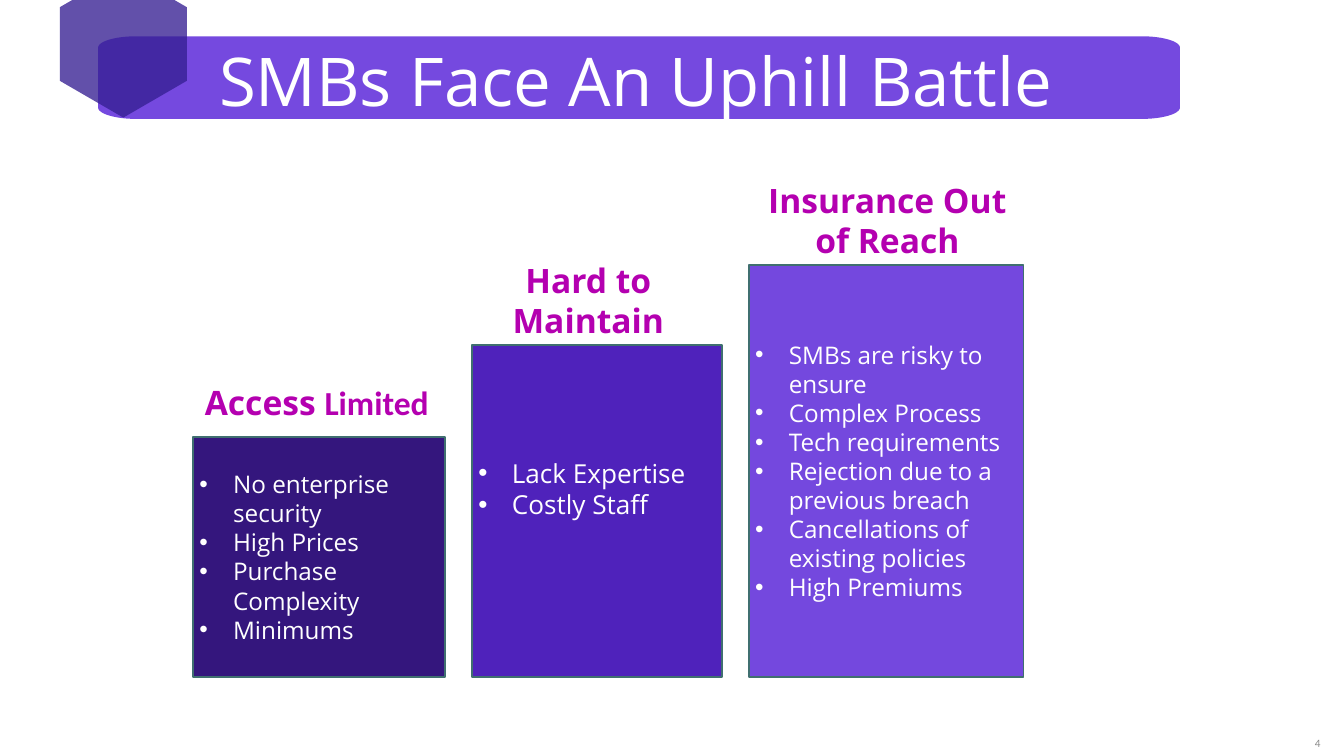
from dataclasses import dataclass
from math import cos, pi, sin

from lxml import etree
from pptx import Presentation
from pptx.dml.color import RGBColor
from pptx.enum import shapes, text
from pptx.oxml import ns
from pptx.util import Emu, Inches, Pt

COLUMNS, ROWS = 20, 11.25
CELL = Inches(1)
BASE_ROW = 10.07
WHITE, MAGENTA, EDGE = "FFFFFF", "B400B0", "406F70"
BODY_FONT, PLAIN_FONT = "Open Sans", "Calibri"
ALIGN = text.PP_ALIGN


@dataclass(frozen=True)
class Area:
    column: float
    row: float
    columns: float
    rows: float

    def emu(self) -> list[Emu]:
        return [grid(n) for n in (self.column, self.row, self.columns, self.rows)]


@dataclass(frozen=True)
class Span:
    words: str
    font: str = BODY_FONT


@dataclass(frozen=True)
class Step:
    column: float
    row: float
    columns: float
    fill: str
    size: float
    bullets: tuple[str, ...]
    heading: tuple[Span, ...]
    heading_area: Area
    heading_align: ALIGN = ALIGN.CENTER
    lift: float = 0


STEPS = (
    Step(2.87, 6.5, 3.75, "34167D", 26,
         ("No enterprise security", "High Prices", "Purchase Complexity", "Minimums"),
         (Span("Access "), Span("Limited", PLAIN_FONT)),
         Area(2.95, 5.63, 3.7, 0.71), ALIGN.LEFT),
    Step(7.02, 5.14, 3.73, "4F22BB", 28,
         ("Lack Expertise", "Costly Staff"),
         (Span("Hard to Maintain"),),
         Area(6.87, 3.82, 3.77, 1.31), lift=0.67),
    Step(11.14, 3.94, 4.09, "7448DE", 26,
         ("SMBs are risky to ensure", "Complex Process", "Tech requirements",
          "Rejection due to a previous breach", "Cancellations of existing policies",
          "High Premiums"),
         (Span("Insurance Out of Reach"),),
         Area(11.14, 2.63, 4.13, 1.35)),
)


def grid(cells: float) -> Emu:
    return Emu(round(cells * CELL))


def color(value: str) -> RGBColor:
    return RGBColor.from_string(value)


def style(font, size: float, value: str, name: str = BODY_FONT, bold: bool = False) -> None:
    font.size, font.name, font.bold = Pt(size), name, bold
    font.color.rgb = color(value)


def add_polygon(page, points: list[tuple[float, float]], fill: str):
    corners = [(grid(x), grid(y)) for x, y in points]
    builder = page.shapes.build_freeform(*corners[0])
    builder.add_line_segments(corners[1:], close=True)
    polygon = builder.convert_to_shape()
    polygon.shadow.inherit = False
    polygon.fill.solid()
    polygon.fill.fore_color.rgb = color(fill)
    polygon.line.fill.background()
    return polygon


def add_banner(page, area: Area, radius_x: float, radius_y: float) -> None:
    left, top = area.column + radius_x, area.row + radius_y
    right = area.column + area.columns - radius_x
    bottom = area.row + area.rows - radius_y
    centres = ((right, bottom), (left, bottom), (left, top), (right, top))
    points = []
    for quarter, (x, y) in enumerate(centres):
        for step in range(13):
            angle = (quarter + step / 12) * pi / 2
            points.append((x + radius_x * cos(angle), y + radius_y * sin(angle)))
    add_polygon(page, points, "7549DF")


def add_hexagon(page, area: Area, opacity: int) -> None:
    shares = ((0.5, 0), (1, 0.25), (1, 0.75), (0.5, 1), (0, 0.75), (0, 0.25))
    points = [(area.column + x * area.columns, area.row + y * area.rows) for x, y in shares]
    hexagon = add_polygon(page, points, "361F93")
    fill = hexagon._element.spPr.find(ns.qn("a:solidFill"))
    etree.SubElement(fill[0], ns.qn("a:alpha"), val=str(opacity * 1000))


def add_label(page, area: Area, spans: tuple[Span, ...], size: float, value: str,
              align: ALIGN = ALIGN.LEFT, bold: bool = False):
    box = page.shapes.add_textbox(*area.emu())
    frame = box.text_frame
    frame.word_wrap = True
    para = frame.paragraphs[0]
    para.alignment = align
    style(para.font, size, value, spans[0].font, bold)
    for span in spans:
        run = para.add_run()
        run.text = span.words
        style(run.font, size, value, span.font, bold)
    return frame


def add_bullet(para) -> None:
    props = para._p.get_or_add_pPr()
    props.set("marL", str(grid(0.5)))
    props.set("indent", str(grid(-0.5)))
    etree.SubElement(props, ns.qn("a:buFont"), typeface="Arial")
    etree.SubElement(props, ns.qn("a:buChar"), char="•")


def add_step(page, step: Step) -> None:
    area = Area(step.column, step.row, step.columns, BASE_ROW - step.row)
    block = page.shapes.add_shape(shapes.MSO_SHAPE.RECTANGLE, *area.emu())
    block.shadow.inherit = False
    block.fill.solid()
    block.fill.fore_color.rgb = color(step.fill)
    block.line.color.rgb = color(EDGE)
    block.line.width = Pt(2)
    frame = block.text_frame
    frame.word_wrap = True
    frame.vertical_anchor = text.MSO_ANCHOR.MIDDLE
    frame.margin_bottom = grid(0.05 + step.lift)
    for index, words in enumerate(step.bullets):
        para = frame.add_paragraph() if index else frame.paragraphs[0]
        para.text = words
        para.alignment = ALIGN.LEFT
        add_bullet(para)
        style(para.font, step.size, WHITE)
    add_label(page, step.heading_area, step.heading, 36, MAGENTA, step.heading_align, True)


def main() -> None:
    deck = Presentation()
    deck.slide_width, deck.slide_height = grid(COLUMNS), grid(ROWS)
    page = deck.slides.add_slide(deck.slide_layouts[6])

    add_banner(page, Area(1.46, 0.54, 16.1, 1.23), 0.57, 0.17)
    add_hexagon(page, Area(0.89, -0.44, 1.89, 2.19), 78)
    title = add_label(page, Area(3.26, 0.54, 13.35, 1.21),
                      (Span("SMBs Face An Uphill Battle"),), 72, WHITE)
    title.margin_left = title.margin_right = title.margin_top = title.margin_bottom = 0
    title.paragraphs[0].line_spacing = Pt(89.8)

    for step in STEPS:
        add_step(page, step)

    number = add_label(page, Area(17.42, 10.85, 2.33, 0.4),
                       (Span("4", PLAIN_FONT),), 12, "8C8C8C", ALIGN.RIGHT)
    number.vertical_anchor = text.MSO_ANCHOR.MIDDLE
    deck.save("out.pptx")


if __name__ == "__main__":
    main()
